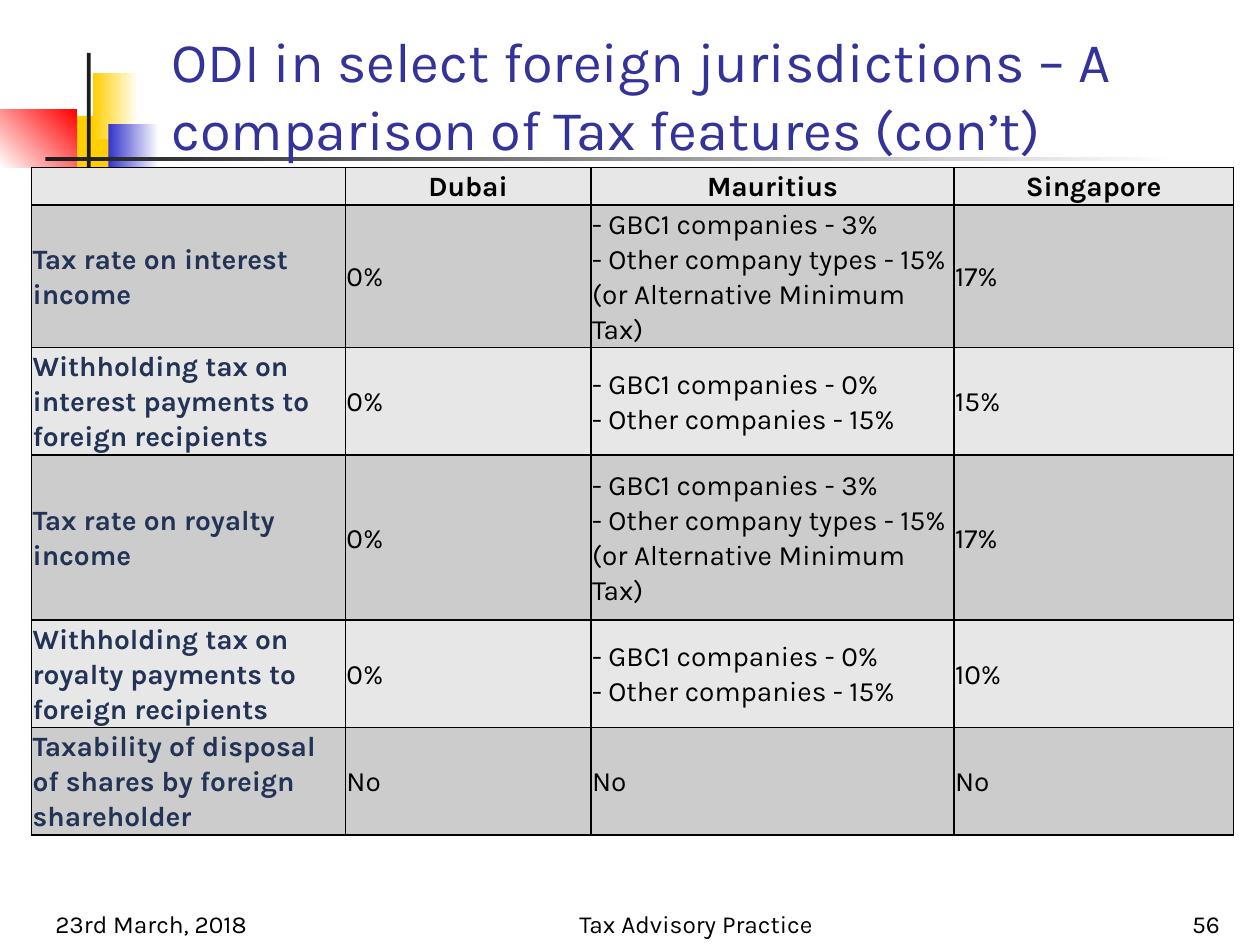
from lxml import etree
from pptx import Presentation
from pptx.dml.color import RGBColor
from pptx.enum.shapes import MSO_SHAPE
from pptx.enum.text import MSO_ANCHOR, MSO_AUTO_SIZE, PP_ALIGN
from pptx.oxml.ns import qn
from pptx.util import Pt

RECT = MSO_SHAPE.RECTANGLE
LEFT, CENTER, RIGHT = PP_ALIGN.LEFT, PP_ALIGN.CENTER, PP_ALIGN.RIGHT
MIDDLE, BOTTOM = MSO_ANCHOR.MIDDLE, MSO_ANCHOR.BOTTOM

FONT = "Karla"
CELL_SIZE = 16
BLACK = RGBColor(0x00, 0x00, 0x00)
WHITE = RGBColor(0xFF, 0xFF, 0xFF)
CHARCOAL = RGBColor(0x1C, 0x1C, 0x1C)
YELLOW = RGBColor(0xFF, 0xCF, 0x01)
BLUE = RGBColor(0x33, 0x33, 0xCC)
RED = RGBColor(0xFF, 0x00, 0x00)
TITLE_BLUE = RGBColor(0x33, 0x33, 0x99)
LABEL_BLUE = RGBColor(0x22, 0x33, 0x55)
LIGHT_ROW = RGBColor(0xE7, 0xE7, 0xE7)
DARK_ROW = RGBColor(0xCC, 0xCC, 0xCC)

# left, top, width, height, colours (one: solid, two: gradient), angle
ORNAMENTS = [
    (33.1, 66.2, 34.6, 37.4, [YELLOW], 0),
    (42.5, 95.8, 33.1, 37.4, [BLUE], 0),
    (53.3, 41.8, 25.9, 37.4, [YELLOW, WHITE], 0),
    (61.9, 70.6, 28.8, 37.4, [BLUE, WHITE], 0),
    (0, 62.6, 43.9, 33.1, [WHITE, RED], 45),
    (49.7, 30.2, 2.2, 82.8, [CHARCOAL], 0),
    (25.9, 90, 648, 2.2, [CHARCOAL, WHITE], 0),
]

INCOME_TAX = ("- GBC1 companies - 3%\n"
              "- Other company types - 15% (or Alternative Minimum Tax)")
WITHHOLDING_TAX = "- GBC1 companies - 0%\n- Other companies - 15%"
ROWS = [
    ("", "Dubai", "Mauritius", "Singapore"),
    ("Tax rate on interest income", "0%", INCOME_TAX, "17%"),
    ("Withholding tax on interest payments to foreign recipients",
     "0%", WITHHOLDING_TAX, "15%"),
    ("Tax rate on royalty income", "0%", INCOME_TAX, "17%"),
    ("Withholding tax on royalty payments to foreign recipients",
     "0%", WITHHOLDING_TAX, "10%"),
    ("Taxability of disposal of shares by foreign shareholder",
     "No", "No", "No"),
]
COL_WIDTHS = [179.3, 140.4, 207.4, 159.8]
ROW_HEIGHTS = [15.8, 78.5, 46.8, 94.3, 41.8, 41.8]


def format_paragraph(p, size, color, align=LEFT, bold=False):
    p.alignment = align
    for r in p.runs:
        r.font.name = FONT
        r.font.size = Pt(size)
        r.font.bold = bold
        r.font.color.rgb = color


def add_ornament(s, left, top, width, height, colors, angle):
    sp = s.shapes.add_shape(RECT, Pt(left), Pt(top), Pt(width), Pt(height))
    sp.shadow.inherit = False
    sp.line.fill.background()
    if len(colors) == 1:
        sp.fill.solid()
        sp.fill.fore_color.rgb = colors[0]
        return
    sp.fill.gradient()
    sp.fill.gradient_angle = angle
    for stop, color in zip(sp.fill.gradient_stops, colors):
        stop.color.rgb = color


def set_title(s, text):
    title = s.shapes.title
    title.left, title.top = Pt(90.7), Pt(16.6)
    title.width, title.height = Pt(613.4), Pt(79.2)
    tf = title.text_frame
    tf.text = text
    tf.word_wrap = True
    tf.auto_size = MSO_AUTO_SIZE.NONE
    tf.vertical_anchor = BOTTOM
    format_paragraph(tf.paragraphs[0], 32, TITLE_BLUE)
    s.shapes._spTree.append(title._element)  # in front of the ornaments


def add_footer(s, text, left, width, align):
    tf = s.shapes.add_textbox(Pt(left), Pt(504), Pt(width), Pt(36)).text_frame
    tf.word_wrap = True
    tf.vertical_anchor = BOTTOM
    tf.text = text
    format_paragraph(tf.paragraphs[0], 14, BLACK, align)


def set_borders(cell):
    tc_pr = cell._tc.get_or_add_tcPr()
    for i, side in enumerate(("lnL", "lnR", "lnT", "lnB")):
        ln = etree.Element(qn(f"a:{side}"), w=str(Pt(1)))
        fill = etree.SubElement(ln, qn("a:solidFill"))
        etree.SubElement(fill, qn("a:srgbClr"), val=str(BLACK))
        tc_pr.insert(i, ln)


def fill_cell(cell, text, fill, color, align, bold):
    cell.fill.solid()
    cell.fill.fore_color.rgb = fill
    set_borders(cell)
    cell.margin_left = cell.margin_right = Pt(0.7)
    cell.margin_top = cell.margin_bottom = Pt(0.7)
    cell.vertical_anchor = MIDDLE
    p = cell.text_frame.paragraphs[0]
    p.text = text
    p.line_spacing = 1.07
    format_paragraph(p, CELL_SIZE, color, align, bold)
    # Line breaks and empty cells need the text size too
    size = str(CELL_SIZE * 100)
    for br in p._p.findall(qn("a:br")):
        etree.SubElement(br, qn("a:rPr"), sz=size)
    if not text:
        etree.SubElement(p._p, qn("a:endParaRPr"), sz=size)


def add_tax_table(s):
    table = s.shapes.add_table(
        len(ROWS), len(COL_WIDTHS), Pt(18), Pt(95.8),
        Pt(sum(COL_WIDTHS)), Pt(sum(ROW_HEIGHTS))).table
    for col, width in zip(table.columns, COL_WIDTHS):
        col.width = Pt(width)
    for row, height in zip(table.rows, ROW_HEIGHTS):
        row.height = Pt(height)
    for i, texts in enumerate(ROWS):
        for j, text in enumerate(texts):
            header, label = i == 0, j == 0
            fill_cell(table.cell(i, j), text,
                      DARK_ROW if i % 2 else LIGHT_ROW,
                      LABEL_BLUE if label else BLACK,
                      CENTER if header else LEFT,
                      header or label)


def main():
    prs = Presentation()
    prs.slide_width, prs.slide_height = Pt(720), Pt(540)
    s = prs.slides.add_slide(prs.slide_layouts[5])
    for ornament in ORNAMENTS:
        add_ornament(s, *ornament)
    add_footer(s, "23rd March, 2018", 24.5, 149.8, LEFT)
    add_footer(s, "56", 554.4, 149.8, RIGHT)
    set_title(s, "ODI in select foreign jurisdictions – "
                 "A comparison of Tax features (con’t)")
    add_tax_table(s)
    add_footer(s, "Tax Advisory Practice", 283.7, 228.2, CENTER)
    prs.save("out.pptx")


if __name__ == "__main__":
    main()
